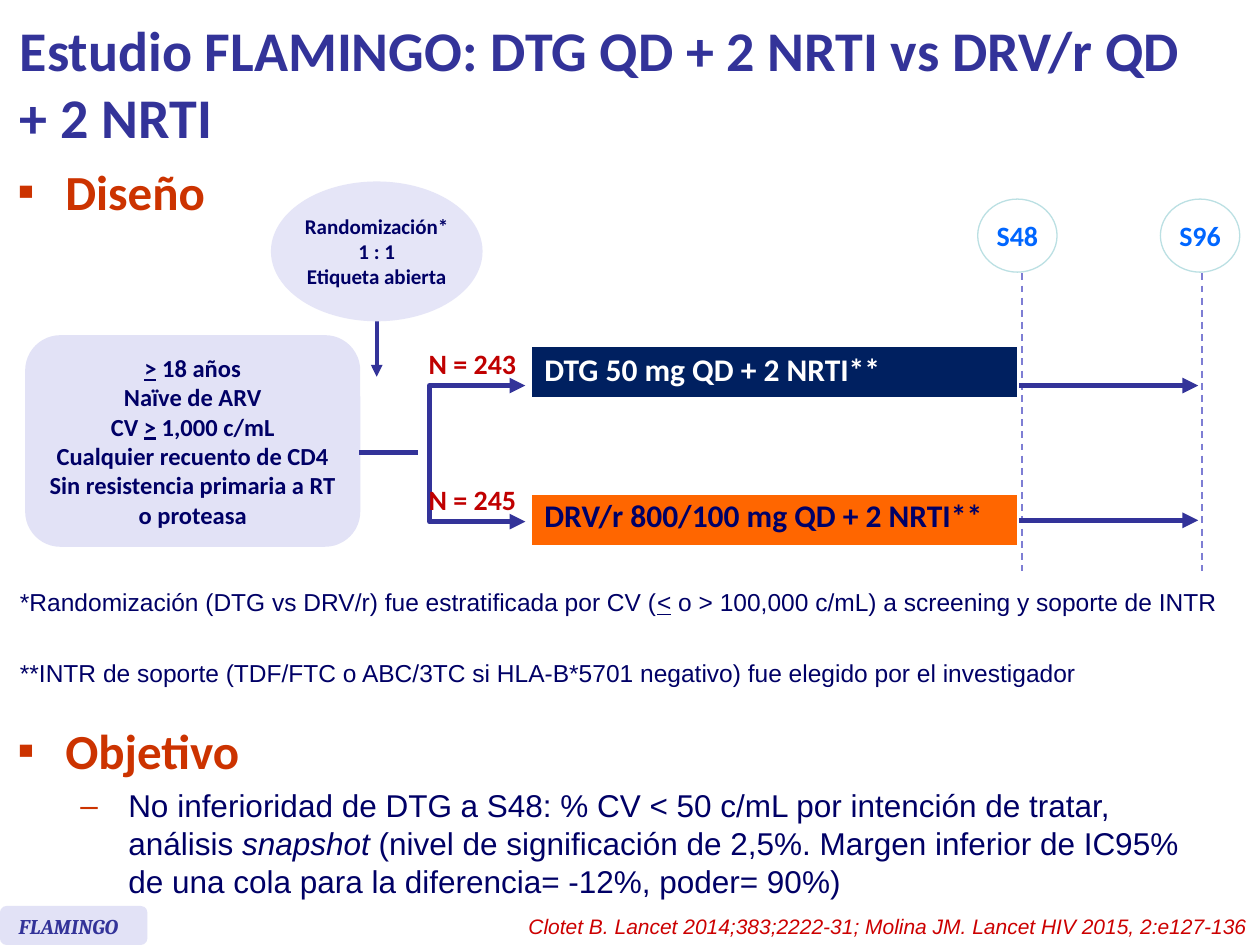
from lxml import etree
from pptx import Presentation
from pptx import util as u
from pptx.dml.color import RGBColor
from pptx.enum import dml, shapes, text
from pptx.oxml.ns import qn

CELL = u.Inches(0.1)
COLS, ROWS = 100, 75
NAVY, INDIGO, RED, RUST = "000066", "333399", "C00000", "CC3300"
LILAC, PALE, WHITE = "E2E2F6", "E5E5F7", "FFFFFF"
MIDDLE, TOP = text.MSO_ANCHOR.MIDDLE, text.MSO_ANCHOR.TOP
LEFT, CENTER, RIGHT = text.PP_ALIGN.LEFT, text.PP_ALIGN.CENTER, text.PP_ALIGN.RIGHT


def grid(*cells):
    return [round(c * CELL) for c in cells]


def rgb(value):
    return RGBColor.from_string(value)


def add_runs(p, runs, size, color, font="Calibri", bold=False, italic=False):
    for run in [runs] if isinstance(runs, str) else runs:
        words, mark = (run, "") if isinstance(run, str) else run
        for i, line in enumerate(words.split("\n")):
            if i:
                p.add_line_break()
            r = p.add_run()
            r.text = line
            r.font.name, r.font.size = font, u.Pt(size)
            r.font.bold, r.font.italic = bold, italic or mark == "i"
            if mark == "u":
                r.font.underline = True
            r.font.color.rgb = rgb(color)


def fill_text(tf, paragraphs, align=LEFT, anchor=TOP, wrap=True, **style):
    tf.word_wrap, tf.vertical_anchor = wrap, anchor
    for i, runs in enumerate(paragraphs):
        p = tf.add_paragraph() if i else tf.paragraphs[0]
        p.alignment = align
        add_runs(p, runs, **style)


def add_text(s, box, paragraphs, **style):
    tf = s.shapes.add_textbox(*grid(*box)).text_frame
    fill_text(tf, paragraphs, **style)
    return tf


def add_bullet(p, char, indent):
    pPr = p._p.get_or_add_pPr()
    pPr.set("marL", str(u.Inches(indent)))
    pPr.set("indent", str(-u.Inches(0.38)))
    color = etree.SubElement(pPr, qn("a:buClr"))
    etree.SubElement(color, qn("a:srgbClr"), val=RUST)
    etree.SubElement(pPr, qn("a:buFont"), typeface="Arial")
    etree.SubElement(pPr, qn("a:buChar"), char=char)


def add_heading(s, box, words):
    tf = add_text(s, box, [words], size=28, color=RUST, bold=True)
    add_bullet(tf.paragraphs[0], "▪", 0.38)
    return tf


def add_shape(s, kind, box, fill, line=None, paragraphs=(), **style):
    sp = s.shapes.add_shape(kind, *grid(*box))
    sp.shadow.inherit = False
    sp.fill.solid()
    sp.fill.fore_color.rgb = rgb(fill)
    if line:
        sp.line.color.rgb = rgb(line)
        sp.line.width = u.Pt(0.75)
    else:
        sp.line.fill.background()
    if paragraphs:
        fill_text(sp.text_frame, paragraphs, align=CENTER, anchor=MIDDLE, **style)


def style_line(sp, color, width, ends=()):
    sp.line.color.rgb = rgb(color)
    sp.line.width = u.Pt(width)
    for end in ends:
        etree.SubElement(sp.line._get_or_add_ln(), qn(f"a:{end}"), type="triangle")


def add_line(s, x1, y1, x2, y2, color=INDIGO, width=3, ends=(), dash=False):
    c = s.shapes.add_connector(shapes.MSO_CONNECTOR.STRAIGHT, *grid(x1, y1, x2, y2))
    if dash:
        c.line.dash_style = dml.MSO_LINE.DASH
    style_line(c, color, width, ends)
    etree.SubElement(c._element.spPr, qn("a:effectLst"))


def add_fork(s, points):
    start, *rest = [grid(*point) for point in points]
    builder = s.shapes.build_freeform(*start)
    builder.add_line_segments(rest, close=False)
    sp = builder.convert_to_shape()
    sp.shadow.inherit = False
    sp.fill.background()
    style_line(sp, INDIGO, 3, ("headEnd", "tailEnd"))


def add_arm(s, top, words, fill, color, spacing):
    table = s.shapes.add_table(1, 1, *grid(42.2, top, 38.6, 4.1)).table
    table.first_row = table.horz_banding = False
    cell = table.cell(0, 0)
    cell.fill.solid()
    cell.fill.fore_color.rgb = rgb(fill)
    cell.vertical_anchor = MIDDLE
    p = cell.text_frame.paragraphs[0]
    p.line_spacing = spacing
    add_runs(p, words, size=18, color=color, bold=True)


def add_design(s):
    add_heading(s, (0.4, 12.3, 19.8, 6.3), "Diseño")
    add_line(s, 29.9, 25.5, 29.9, 29.9, width=2.25, ends=["tailEnd"])
    add_arm(s, 27.5, "DTG 50 mg QD + 2 NRTI**", "002060", WHITE, 0.8)
    add_arm(s, 39.2, "DRV/r 800/100 mg QD + 2 NRTI**", "FF6600", NAVY, 0.7)
    oval = shapes.MSO_SHAPE.OVAL
    add_shape(s, oval, (21.5, 14.4, 16.8, 11.1), PALE,
              paragraphs=["Randomización*", "1 : 1", "Etiqueta abierta"],
              wrap=False, size=12, color=NAVY, bold=True)
    criteria = [[(">", "u"), " 18 años"], "Naïve de ARV",
                ["CV ", (">", "u"), " 1,000 c/mL"], "Cualquier recuento de CD4",
                "Sin resistencia primaria a RT o proteasa"]
    add_shape(s, shapes.MSO_SHAPE.ROUNDED_RECTANGLE, (2, 26.6, 26.6, 16.8), LILAC,
              paragraphs=criteria, size=14, color=NAVY, bold=True)
    add_fork(s, [(41.7, 30.6), (34.1, 30.6), (34.1, 41.4), (41.7, 41.4)])
    add_line(s, 28.5, 35.9, 33.2, 35.9)
    for top, words in ((27, "N = 243"), (37.8, "N = 245")):
        add_text(s, (33, top, 9, 3.7), [words], align=CENTER, wrap=False,
                 size=16, color=RED, bold=True)
    for left, middle, week in ((77.6, 81.1, "S48"), (92.1, 95.4, "S96")):
        add_shape(s, oval, (left, 15.8, 6.3, 5.8), WHITE, "BBE0E3", [week],
                  wrap=False, size=16, color="0066FF", bold=True)
        add_line(s, middle, 21.7, middle, 45.3, "7E7ED4", 1, dash=True)
    for y in (30.6, 41.3):
        add_line(s, 80.9, y, 95.1, y, ends=["tailEnd"])


def add_notes_on_design(s):
    notes = (
        (46.1, ["*Randomización (DTG vs DRV/r) fue estratificada por CV (", ("<", "u"),
                " o > 100,000 c/mL) a screening y soporte de INTR"]),
        (51.7, "**INTR de soporte (TDF/FTC o ABC/3TC si HLA-B*5701 negativo) "
               "fue elegido por el investigador"),
    )
    for top, runs in notes:
        add_text(s, (0.6, top, 99.4, 3.4), [runs], size=14, color=NAVY, font="Arial")


def add_objective(s):
    p = add_heading(s, (0.4, 56.7, 98, 12.1), "Objetivo").add_paragraph()
    p.level = 1
    p.space_before = u.Pt(4)
    add_bullet(p, "–", 0.88)
    add_runs(p, ["No inferioridad de DTG a S48: % CV < 50 c/mL por intención de tratar, \nanálisis ",
                 ("snapshot", "i"),
                 " (nivel de significación de 2,5%. Margen inferior de IC95% \n"
                 "de una cola para la diferencia= -12%, poder= 90%)"],
             size=18, color=NAVY, font="Arial")


def add_footer(s):
    add_shape(s, shapes.MSO_SHAPE.ROUNDED_RECTANGLE, (0, 71.9, 11.7, 3.1), LILAC)
    add_text(s, (0.5, 72, 11.2, 3), ["FLAMINGO"], size=12, color=INDIGO,
             font="Cambria", bold=True, italic=True)
    add_text(s, (36.4, 72, 63.6, 3),
             ["Clotet B. Lancet 2014;383;2222-31; Molina JM. Lancet HIV 2015, 2:e127-136"],
             align=RIGHT, size=12, color="CC0000", font="Arial", italic=True)


def main():
    prs = Presentation()
    prs.slide_width, prs.slide_height = grid(COLS, ROWS)
    s = prs.slides.add_slide(prs.slide_layouts[6])
    add_text(s, (0.6, 0.5, 95.5, 12.1),
             ["Estudio FLAMINGO: DTG QD + 2 NRTI vs DRV/r QD\n+ 2 NRTI"],
             anchor=MIDDLE, size=32, color=INDIGO, bold=True)
    add_design(s)
    add_notes_on_design(s)
    add_objective(s)
    add_footer(s)
    prs.save("out.pptx")


if __name__ == "__main__":
    main()
